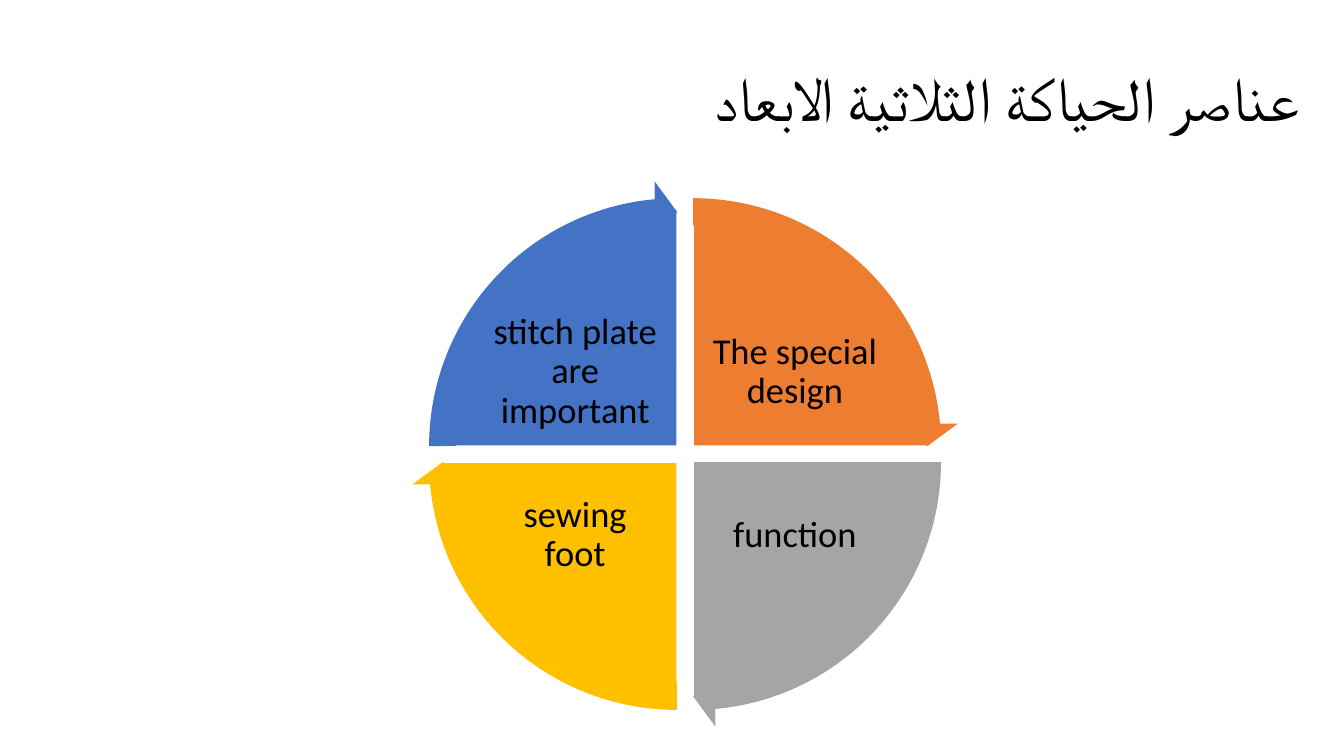
from pptx import Presentation
from pptx.dml.color import RGBColor
from pptx.enum import shapes, text
from pptx.oxml import parse_xml
from pptx.oxml.ns import nsdecls
from pptx.util import Inches, Pt

TITLE = "عناصر الحياكة الثلاثية الابعاد"
COLORS = {"orange": "ED7D31", "gray": "A5A5A5", "gold": "FFC000",
          "blue": "4472C4", "white": "FFFFFF", "black": "000000"}
FONT = "Calibri"
# Clockwise from the upper right: label, colour, column, row
QUARTERS = [
    ("The special design", "orange", 1, 0),
    ("function", "gray", 1, 1),
    ("sewing foot", "gold", 0, 1),
    ("stitch plate are important", "blue", 0, 0),
]
GAP = 0.16
PIE_LEFT, PIE_TOP, PIE_SIZE = 4.37, 2.08, 4.69
GRAY_PIE = (4.47, 2.25, 4.81, 4.65)
ARROW_LEFT, ARROW_TOP, ARROW_SIZE = 4.08, 1.79, 5.27
LABEL_LEFT, LABEL_TOP, LABEL_W, LABEL_H = 4.84, 3.05, 1.73, 1.28
LABEL_DX, LABEL_DY = 2.18, 1.62
# Angles in the preset's units: a full turn is 216
TURN, QUARTER, TOP_ANGLE, ARROW_SWEEP = 216, 54, 162, 50.725


def color(name):
    return RGBColor.from_string(COLORS[name])


def inches(box):
    return [Inches(v) for v in box]


def write(tf, words, size, align):
    """Fill a frame with one right-to-left paragraph, centred vertically."""
    tf.text = words
    tf.word_wrap = True
    tf.auto_size = text.MSO_AUTO_SIZE.NONE
    tf.vertical_anchor = text.MSO_ANCHOR.MIDDLE
    p = tf.paragraphs[0]
    p.alignment = align
    p.line_spacing = 0.9
    p._p.get_or_add_pPr().set("rtl", "1")
    r = p.runs[0]
    r.font.size, r.font.name = Pt(size), FONT
    r.font.color.rgb = color("black")
    r._r.get_or_add_rPr().append(
        parse_xml(f'<a:cs {nsdecls("a")} typeface="{FONT}"/>'))


def add_preset(s, kind, box, fill, adjustments):
    sp = s.shapes.add_shape(kind, *inches(box))
    sp.shadow.inherit = False
    sp.fill.solid()
    sp.fill.fore_color.rgb = color(fill)
    sp.line.fill.background()
    for i, value in enumerate(adjustments):
        sp.adjustments[i] = value
    return sp


def add_pie(s, i, name, col, row):
    box = (PIE_LEFT + GAP * col, PIE_TOP + GAP * row, PIE_SIZE, PIE_SIZE)
    start = (TOP_ANGLE + QUARTER * i) % TURN
    sp = add_preset(s, shapes.MSO_SHAPE.PIE, GRAY_PIE if name == "gray" else box,
                    name, (start, (start + QUARTER) % TURN))
    sp.line.color.rgb = color("white")
    sp.line.width = Pt(1)


def add_label(s, words, col, row):
    box = (LABEL_LEFT + LABEL_DX * col, LABEL_TOP + LABEL_DY * row, LABEL_W, LABEL_H)
    tf = s.shapes.add_textbox(*inches(box)).text_frame
    tf.margin_left = tf.margin_right = tf.margin_top = tf.margin_bottom = Inches(0.04)
    write(tf, words, 26, text.PP_ALIGN.CENTER)


def add_arrow(s, i, name, col, row):
    start = (TOP_ANGLE + QUARTER * i) % TURN
    box = (ARROW_LEFT + GAP * col, ARROW_TOP + GAP * row, ARROW_SIZE, ARROW_SIZE)
    add_preset(s, shapes.MSO_SHAPE.CIRCULAR_ARROW, box, name,
               (0.051, 3.275, start + ARROW_SWEEP, start, 0.059))


def main():
    prs = Presentation()
    prs.slide_width, prs.slide_height = Inches(13.33), Inches(7.5)
    s = prs.slides.add_slide(prs.slide_layouts[5])
    title = s.shapes.title
    title.left, title.top, title.width, title.height = inches((1.48, 0.28, 11.5, 1.45))
    write(title.text_frame, TITLE, 44, text.PP_ALIGN.RIGHT)
    for i, (words, name, col, row) in enumerate(QUARTERS):
        add_pie(s, i, name, col, row)
        add_label(s, words, col, row)
    for i, (_, name, col, row) in enumerate(QUARTERS):
        add_arrow(s, i, name, col, row)
    prs.save("out.pptx")


if __name__ == "__main__":
    main()
